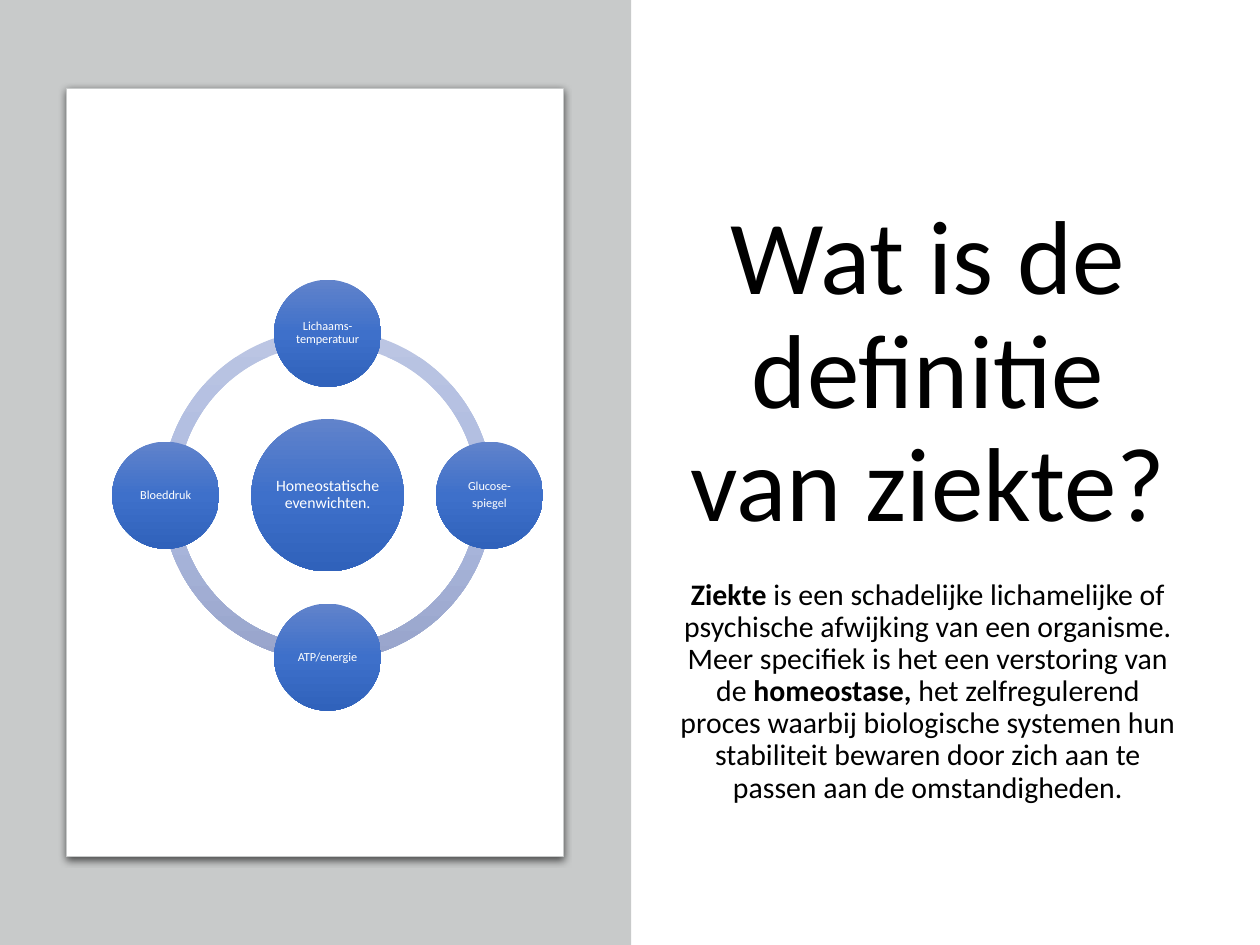
from copy import deepcopy
from dataclasses import dataclass
from math import cos, radians, sin

from lxml import etree
from pptx import Presentation
from pptx import util as u
from pptx.dml.color import RGBColor
from pptx.enum import shapes, text
from pptx.oxml.ns import qn

FONT = "Calibri"
BLACK = RGBColor(0x00, 0x00, 0x00)
WHITE = RGBColor(0xFF, 0xFF, 0xFF)
GREY = RGBColor(0xC8, 0xCA, 0xCA)
RING_COLOURS = (RGBColor(0xBB, 0xC5, 0xE3), RGBColor(0xAE, 0xBB, 0xE0), RGBColor(0x98, 0xA4, 0xCB))
CIRCLE_COLOURS = (RGBColor(0x61, 0x83, 0xCB), RGBColor(0x3E, 0x70, 0xCA), RGBColor(0x30, 0x62, 0xBB))

CENTRE_X, CENTRE_Y = 2.6, 3.93
ORBIT_RADIUS = 1.285
RING_DIAMETER = 2.63
RING_THICKNESS = 0.046
ARC_STARTS = (108, 54, 0, 162)
QUARTER_TURN = 54
FULL_TURN = 216


@dataclass
class Circle:
    lines: tuple[str, ...]
    diameter: float
    size: float
    orbit: float = 0
    angle: float = 0


@dataclass
class TextRun:
    wording: str
    bold: bool = False


CIRCLES = (
    Circle(("Homeostatische evenwichten.",), 1.21, 9),
    Circle(("Lichaams-temperatuur",), 0.85, 7, ORBIT_RADIUS, -90),
    Circle(("Glucose-", "spiegel"), 0.85, 7, ORBIT_RADIUS, 0),
    Circle(("ATP/energie",), 0.85, 7, ORBIT_RADIUS, 90),
    Circle(("Bloeddruk",), 0.85, 7, ORBIT_RADIUS, 180),
)

DEFINITION = (
    TextRun("Ziekte", True),
    TextRun("\u00a0is een schadelijke lichamelijke of psychische afwijking van een organisme. "
            "Meer specifiek is het een verstoring van de ".replace("\u00a0", " ")),
    TextRun("homeostase,", True),
    TextRun(" het zelfregulerend proces waarbij biologische systemen hun stabiliteit bewaren "
            "door zich aan te passen aan de omstandigheden."),
)
DEFINITION = tuple(DEFINITION)


def add_run(paragraph, run: TextRun, size: float, colour: RGBColor) -> None:
    piece = paragraph.add_run()
    piece.text = run.wording
    piece.font.name = FONT
    piece.font.size = u.Pt(size)
    piece.font.bold = run.bold
    piece.font.color.rgb = colour


def format_paragraph(paragraph, before: float = 0, after: float = 0) -> None:
    paragraph.alignment = text.PP_ALIGN.CENTER
    paragraph.line_spacing = 0.9
    paragraph.space_before = u.Pt(before)
    paragraph.space_after = u.Pt(after)


def add_plain_shape(slide, kind, left: float, top: float, width: float, height: float):
    shape = slide.shapes.add_shape(kind, *map(u.Inches, (left, top, width, height)))
    shape.shadow.inherit = False
    shape.line.fill.background()
    return shape


def fill_solid(shape, colour: RGBColor) -> None:
    shape.fill.solid()
    shape.fill.fore_color.rgb = colour


def fill_gradient(shape, colours: tuple[RGBColor, ...]) -> None:
    shape.fill.gradient()
    shape.fill.gradient_angle = 270
    stop_list = shape._element.spPr.find(".//" + qn("a:gsLst"))
    stop_list.insert(1, deepcopy(stop_list[0]))
    for stop, colour, position in zip(shape.fill.gradient_stops, colours, (0, 0.5, 1)):
        stop.color.rgb = colour
        stop.position = position


def add_card_shadow(shape) -> None:
    effects = shape._element.spPr.find(qn("a:effectLst"))
    shadow = etree.SubElement(effects, qn("a:outerShdw"), blurRad=str(u.Pt(4.5)),
                              dist=str(u.Pt(1.5)), dir="5400000", algn="t", rotWithShape="0")
    colour = etree.SubElement(shadow, qn("a:srgbClr"), val=str(BLACK))
    etree.SubElement(colour, qn("a:alpha"), val="63000")


def add_arc(slide, start: float) -> None:
    arc = add_plain_shape(slide, shapes.MSO_SHAPE.BLOCK_ARC, CENTRE_X - RING_DIAMETER / 2,
                          CENTRE_Y - RING_DIAMETER / 2, RING_DIAMETER, RING_DIAMETER)
    arc.adjustments[0] = start
    arc.adjustments[1] = (start + QUARTER_TURN) % FULL_TURN
    arc.adjustments[2] = RING_THICKNESS
    fill_gradient(arc, RING_COLOURS)


def add_circle(slide, circle: Circle) -> None:
    left = CENTRE_X + circle.orbit * cos(radians(circle.angle)) - circle.diameter / 2
    top = CENTRE_Y + circle.orbit * sin(radians(circle.angle)) - circle.diameter / 2
    shape = add_plain_shape(slide, shapes.MSO_SHAPE.OVAL, left, top,
                            circle.diameter, circle.diameter)
    fill_gradient(shape, CIRCLE_COLOURS)
    frame = shape.text_frame
    frame.word_wrap = True
    frame.vertical_anchor = text.MSO_ANCHOR.MIDDLE
    frame.margin_left = frame.margin_right = u.Inches(0.01)
    frame.margin_top = frame.margin_bottom = u.Inches(0.01)
    for index, line in enumerate(circle.lines):
        paragraph = frame.add_paragraph() if index else frame.paragraphs[0]
        format_paragraph(paragraph, after=circle.size * 0.35)
        add_run(paragraph, TextRun(line), circle.size, WHITE)


def add_title(slide) -> None:
    title = slide.shapes.title
    title.left, title.top, title.width, title.height = map(u.Inches, (5.26, 0.7, 4.21, 3.67))
    frame = title.text_frame
    frame.word_wrap = True
    frame.auto_size = text.MSO_AUTO_SIZE.NONE
    frame.vertical_anchor = text.MSO_ANCHOR.BOTTOM
    format_paragraph(frame.paragraphs[0])
    add_run(frame.paragraphs[0], TextRun("Wat is de definitie van ziekte?"), 60, BLACK)


def add_definition(slide) -> None:
    box = slide.shapes.add_textbox(*map(u.Inches, (5.26, 4.55, 4.21, 2.25)))
    box.text_frame.word_wrap = True
    paragraph = box.text_frame.paragraphs[0]
    format_paragraph(paragraph, before=10)
    for run in DEFINITION:
        add_run(paragraph, run, 17, BLACK)


def main() -> None:
    presentation = Presentation()
    presentation.slide_width = u.Inches(10)
    presentation.slide_height = u.Inches(7.5)
    slide = presentation.slides.add_slide(presentation.slide_layouts[5])
    add_title(slide)
    add_definition(slide)
    panel = add_plain_shape(slide, shapes.MSO_SHAPE.RECTANGLE, 0, 0, 5.01, 7.5)
    fill_solid(panel, GREY)
    card = add_plain_shape(slide, shapes.MSO_SHAPE.ROUNDED_RECTANGLE, 0.53, 0.7, 3.94, 6.1)
    card.adjustments[0] = 0
    fill_solid(card, WHITE)
    card.line.color.rgb = GREY
    card.line.width = u.Pt(0.75)
    add_card_shadow(card)
    for start in ARC_STARTS:
        add_arc(slide, start)
    for circle in CIRCLES:
        add_circle(slide, circle)
    presentation.save("out.pptx")


if __name__ == "__main__":
    main()
